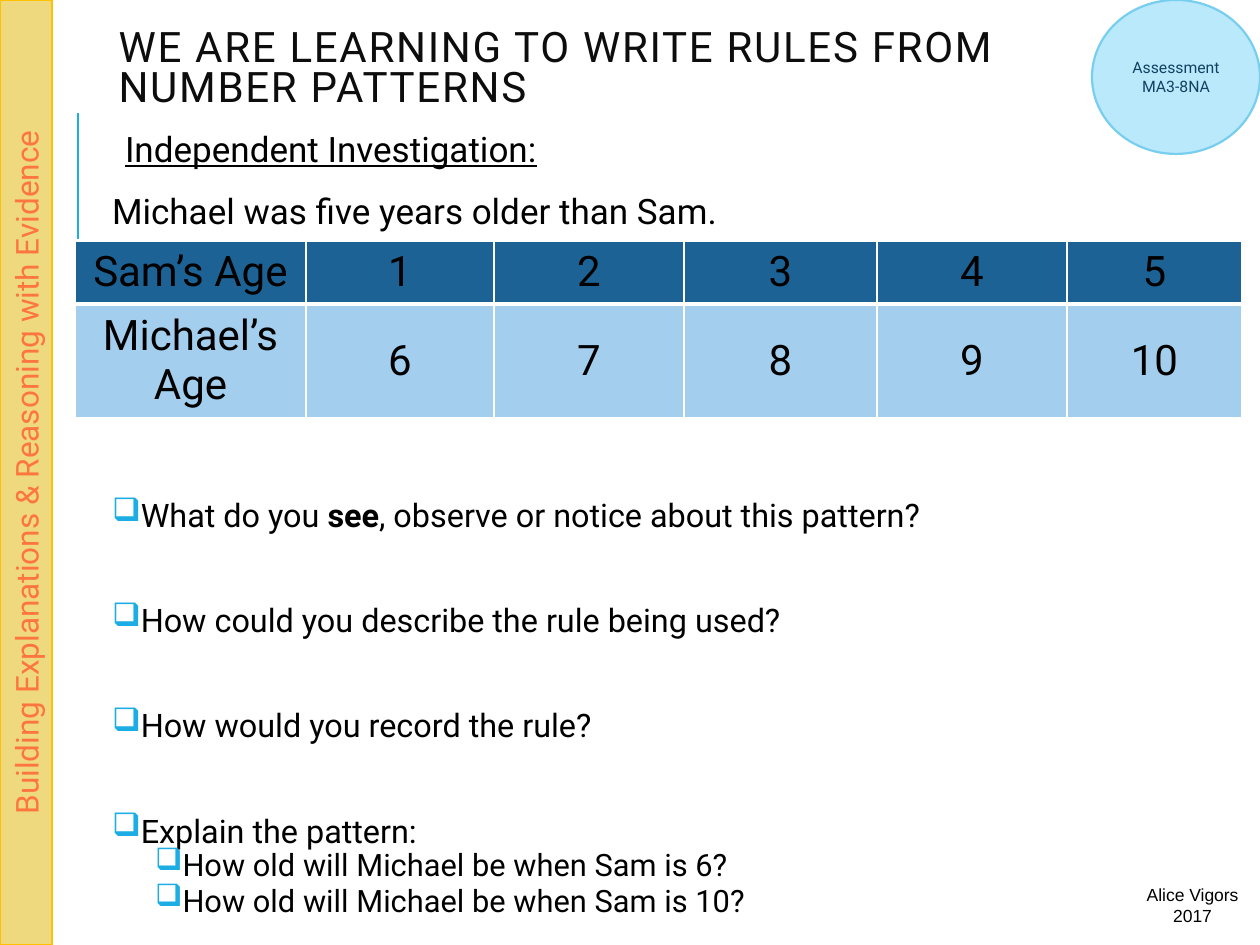
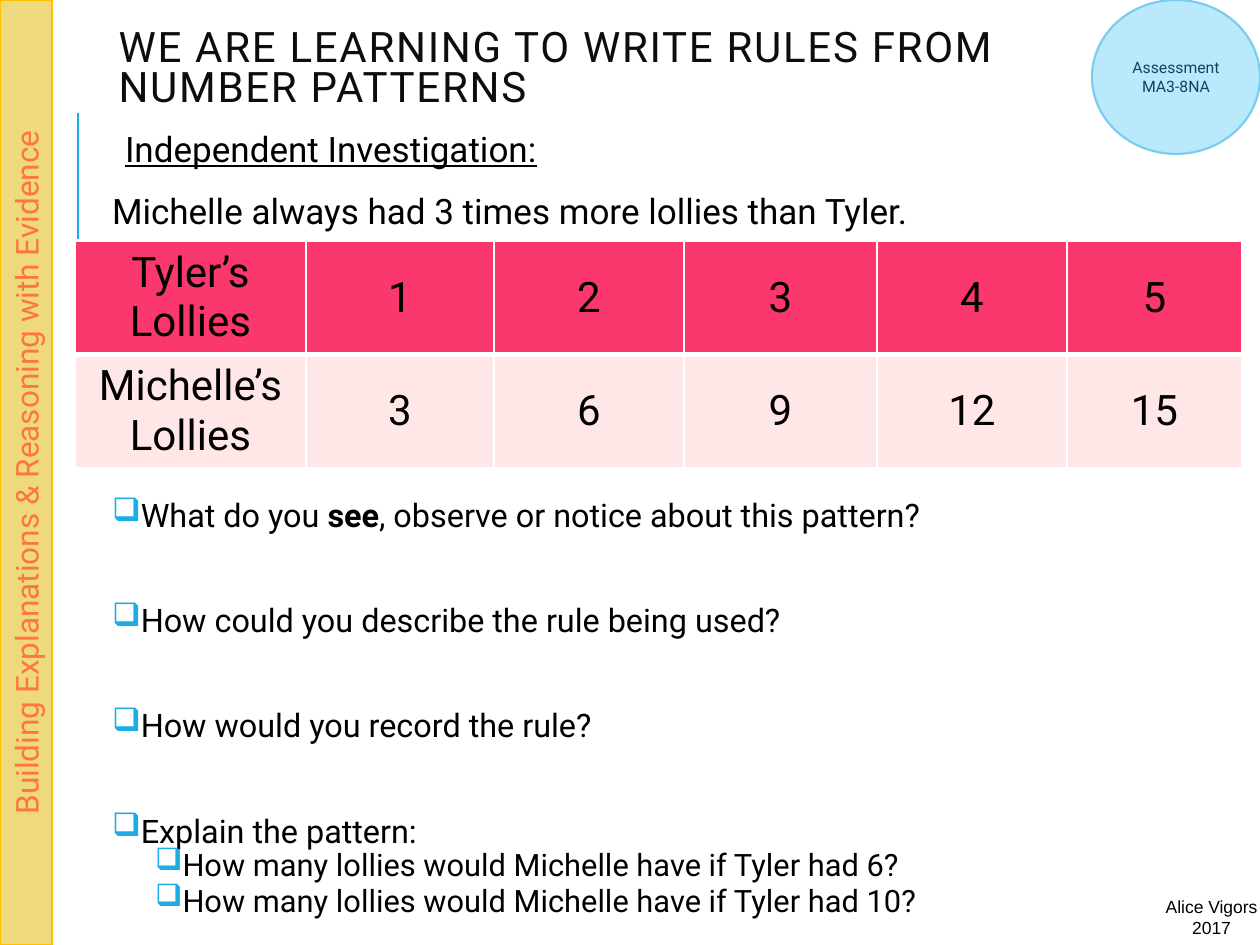
from lxml import etree
from pptx import Presentation
from pptx.dml.color import RGBColor
from pptx.enum.shapes import MSO_CONNECTOR, MSO_SHAPE
from pptx.enum.text import MSO_ANCHOR, MSO_AUTO_SIZE, PP_ALIGN
from pptx.oxml.ns import qn
from pptx.util import Pt

LEFT, MID = PP_ALIGN.LEFT, PP_ALIGN.CENTER
TOP, CENTRE = MSO_ANCHOR.TOP, MSO_ANCHOR.MIDDLE
FIXED = MSO_AUTO_SIZE.NONE
RECT, OVAL = MSO_SHAPE.RECTANGLE, MSO_SHAPE.OVAL
STRAIGHT = MSO_CONNECTOR.STRAIGHT

SCALE = 914400 / 126
FONT = "Roboto"
BLACK, WHITE, BLUE = "000000", "FFFFFF", "1CADE4"
COLS = (231, 188, 190, 193, 190, 175)
ROW = 52
TITLE = "WE ARE LEARNING TO WRITE RULES FROM NUMBER PATTERNS"
ASKS = (
    "What do you *see*, observe or notice about this pattern?",
    "How could you describe the rule being used?",
    "How would you record the rule?",
    "Explain the pattern:",
)
TASKS = (
    dict(
        claim="Michael was five years older than Sam.",
        rows=(("Sam’s Age", 1, 2, 3, 4, 5), ("Michael’s Age", 6, 7, 8, 9, 10)),
        fills=("1D6294", "A3CEED"),
        subs=("How old will Michael be when Sam is 6?",
              "How old will Michael be when Sam is 10?"),
        credit=(1125, 878, 135, 55),
    ),
    dict(
        claim="Michelle always had 3 times more lollies than Tyler.",
        rows=(("Tyler’s Lollies", 1, 2, 3, 4, 5), ("Michelle’s Lollies", 3, 6, 9, 12, 15)),
        fills=("FA386D", "FFE7E7"),
        subs=("How many lollies would Michelle have if Tyler had 6?",
              "How many lollies would Michelle have if Tyler had 10?"),
        credit=(1144, 890, 135, 55),
    ),
)


def px(n):
    return round(n * SCALE)


def box(*nums):
    return [px(n) for n in nums]


def color(code):
    return RGBColor.from_string(code)


def text(frame, line, size=18, ink=BLACK, font=FONT, align=LEFT, under=False,
         lead=1.0, before=0, after=0, left=0, hang=0, mark=None, track=None):
    """Append one paragraph; words between asterisks are bold."""
    para = frame.paragraphs[0]
    if para.runs:
        para = frame.add_paragraph()
    para.alignment, para.line_spacing = align, lead
    para.space_before, para.space_after = Pt(before), Pt(after)
    props = para._p.get_or_add_pPr()
    props.set("marL", str(px(left)))
    props.set("indent", str(px(-hang)))
    if mark:
        tint = etree.SubElement(props, qn("a:buClr"))
        etree.SubElement(tint, qn("a:srgbClr"), val=BLUE)
        etree.SubElement(props, qn("a:buChar"), char=mark)
    for i, part in enumerate(line.split("*")):
        run = para.add_run()
        run.text = part
        face = run.font
        face.name, face.size, face.bold = font, Pt(size), i % 2 == 1
        face.underline = under
        face.color.rgb = color(ink)
        if track:
            run._r.get_or_add_rPr().set("spc", str(track))


def area(slide, place, inset=None):
    """Add a wrapping text box and return its frame."""
    frame = slide.shapes.add_textbox(*box(*place)).text_frame
    frame.word_wrap, frame.vertical_anchor = True, TOP
    if inset is not None:
        frame.margin_left = frame.margin_right = px(inset)
        frame.margin_top = frame.margin_bottom = px(inset)
    return frame


def panel(slide, kind, place, fill, edge):
    """Add a filled shape and return its frame."""
    shape = slide.shapes.add_shape(kind, *box(*place))
    shape.shadow.inherit = False
    shape.fill.solid()
    shape.fill.fore_color.rgb = color(fill)
    shape.line.color.rgb = color(edge)
    shape.line.width = Pt(1.25)
    frame = shape.text_frame
    frame.word_wrap, frame.vertical_anchor = True, CENTRE
    return frame


def rule(slide, x, top, end):
    line = slide.shapes.add_connector(STRAIGHT, *box(x, end, x, top))
    line.line.color.rgb = color(BLUE)
    line.line.width = Pt(1.5)
    etree.SubElement(line._element.spPr, qn("a:effectLst"))


def head(slide, place):
    shape = slide.shapes.title
    shape.left, shape.top, shape.width, shape.height = box(*place)
    frame = shape.text_frame
    frame.word_wrap, frame.auto_size = True, FIXED
    frame.vertical_anchor = CENTRE
    frame.margin_bottom = px(45)  # lifts the two lines
    text(frame, TITLE, size=24, ink="0D0D0D", lead=0.8, track=100)


def frame_parts(slide):
    """Parts that every slide shares."""
    rule(slide, 78, 113, 239)
    head(slide, (106, 40, 987, 100))
    # Side band
    band = panel(slide, RECT, (0, 0, 52, 945), "EFD97E", "FFC000")
    band._txBody.bodyPr.set("vert", "vert270")
    text(band, "Building Explanations & Reasoning with Evidence",
         ink="FD763F", align=MID)
    # Assessment badge
    badge = panel(slide, OVAL, (1092, 0, 168, 154), "BAE9FB", "77CEEF")
    for line in ("Assessment", "MA3-8NA"):
        text(badge, line, size=9, ink="134163", align=MID)


def intro(slide, place, claim):
    frame = area(slide, place, 6)
    look = dict(size=20, lead=0.9, before=12, after=2)
    text(frame, "Independent Investigation:", under=True, left=13, **look)
    text(frame, claim, **look)


def border(cell, low):
    """White cell edges, with the lower one of the given weight."""
    props = cell._tc.get_or_add_tcPr()
    for i, (side, weight) in enumerate((("L", 1), ("R", 1), ("B", low))):
        line = etree.Element(qn("a:ln" + side), w=str(Pt(weight)))
        fill = etree.SubElement(line, qn("a:solidFill"))
        etree.SubElement(fill, qn("a:srgbClr"), val=WHITE)
        props.insert(i, line)


def grid(slide, x, y, rows, fills):
    shape = slide.shapes.add_table(
        len(rows), len(COLS), *box(x, y, sum(COLS), ROW * len(rows)))
    table = shape.table
    for col, width in zip(table.columns, COLS):
        col.width = px(width)
    for r, (row, fill) in enumerate(zip(rows, fills)):
        for c, value in enumerate(row):
            cell = table.cell(r, c)
            cell.fill.solid()
            cell.fill.fore_color.rgb = color(fill)
            cell.vertical_anchor = CENTRE
            border(cell, 1 if r else 3)
            text(cell.text_frame, str(value), size=24, align=MID)


def quiz(slide, place, subs):
    frame = area(slide, place, 6)
    look = dict(lead=0.7, mark="❑")
    for ask in ASKS:
        text(frame, ask, size=18.5, before=42.5, after=2, left=13, hang=13, **look)
    for sub in subs:
        text(frame, sub, size=17.6, before=2, after=4, left=62, hang=19, **look)


def build(deck, task):
    slide = deck.slides.add_slide(deck.slide_layouts[5])
    frame_parts(slide)
    intro(slide, (106, 126, 1105, 129), task["claim"])
    grid(slide, 75, 241, task["rows"], task["fills"])
    quiz(slide, (106, 500, 1105, 433), task["subs"])
    text(area(slide, task["credit"]), "Alice Vigors 2017",
         size=10, font="Arial", align=MID)


def main():
    deck = Presentation()
    deck.slide_width, deck.slide_height = box(1260, 945)
    for task in TASKS:
        build(deck, task)
    deck.save("out.pptx")


if __name__ == "__main__":
    main()
